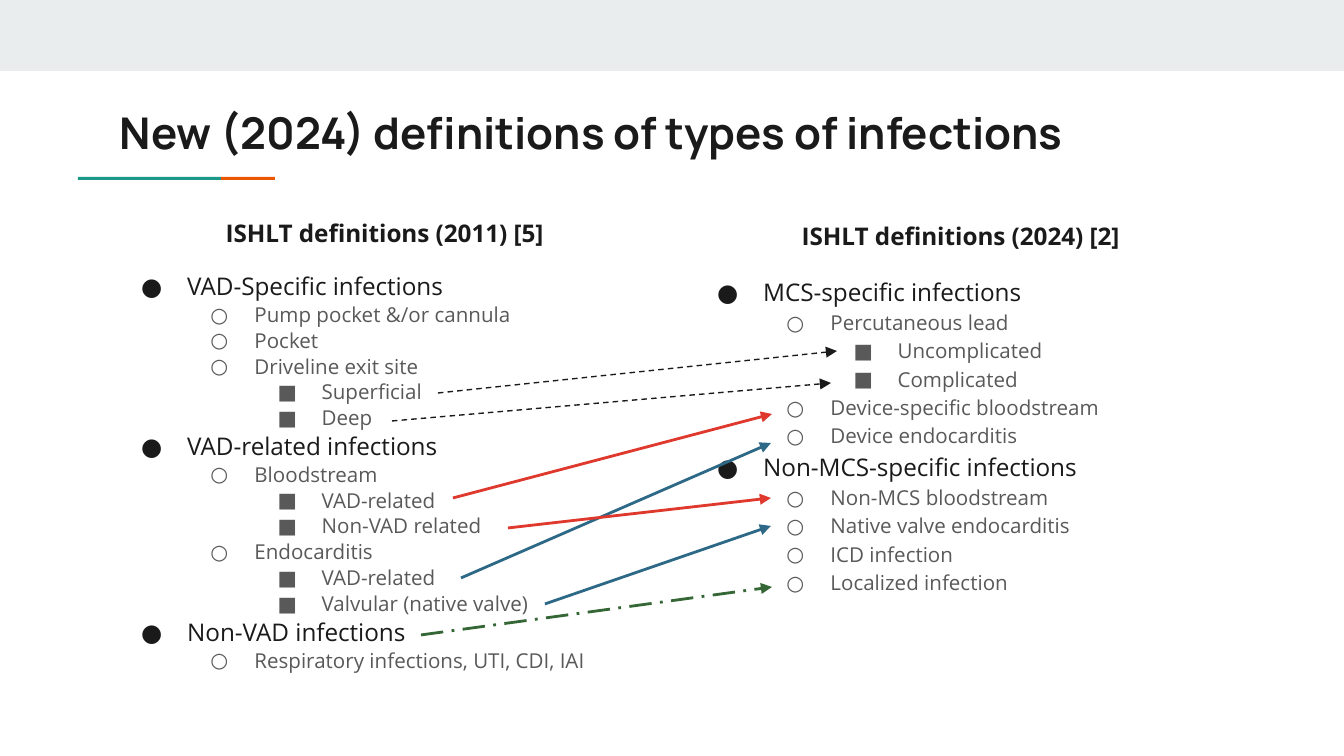
"""Build a slide mapping the 2011 infection definitions to the 2024 ones."""
import lxml.etree
import pptx
import pptx.dml.color
import pptx.enum.dml
import pptx.enum.shapes
import pptx.enum.text
import pptx.oxml.ns
import pptx.util

PX = 914400 / 134.4
INK, GREY, RED, BLUE, GREEN = "1A1A1A", "595959", "DF382C", "2D6987", "356635"


def paint(color_format, color):
    color_format.rgb = pptx.dml.color.RGBColor.from_string(color)


def add_xml(parent, tag, **attributes):
    return lxml.etree.SubElement(parent, pptx.oxml.ns.qn(tag), attributes)


presentation = pptx.Presentation()
presentation.slide_width = round(1344 * PX)
presentation.slide_height = round(756 * PX)
slide = presentation.slides.add_slide(presentation.slide_layouts[6])

bars = [
    (0, 0, 1344, 71, "E9EDEE"),
    (78, 177, 143, 3, "1A9988"),
    (221, 177, 54, 3, "EB5600"),
]
for *bounds, color in bars:
    shape = slide.shapes.add_shape(
        pptx.enum.shapes.MSO_SHAPE.RECTANGLE, *[round(value * PX) for value in bounds])
    shape.shadow.inherit = False
    shape.fill.solid()
    paint(shape.fill.fore_color, color)
    shape.line.fill.background()

title = [("New (2024) definitions of types of infections", None)]
definitions_2011 = [
    ("ISHLT definitions (2011) [5]", None),
    ("VAD-Specific infections", 0),
    ("Pump pocket &/or cannula", 1),
    ("Pocket", 1),
    ("Driveline exit site", 1),
    ("Superficial", 2),
    ("Deep", 2),
    ("VAD-related infections", 0),
    ("Bloodstream", 1),
    ("VAD-related", 2),
    ("Non-VAD related", 2),
    ("Endocarditis", 1),
    ("VAD-related", 2),
    ("Valvular (native valve)", 2),
    ("Non-VAD infections", 0),
    ("Respiratory infections, UTI, CDI, IAI", 1),
]
definitions_2024 = [
    ("ISHLT definitions (2024) [2]", None),
    ("MCS-specific infections", 0),
    ("Percutaneous lead", 1),
    ("Uncomplicated", 2),
    ("Complicated", 2),
    ("Device-specific bloodstream", 1),
    ("Device endocarditis", 1),
    ("Non-MCS-specific infections", 0),
    ("Non-MCS bloodstream", 1),
    ("Native valve endocarditis", 1),
    ("ICD infection", 1),
    ("Localized infection", 1),
]
LEFT = pptx.enum.text.PP_ALIGN.LEFT
CENTER = pptx.enum.text.PP_ALIGN.CENTER
text_boxes = [
    ((107, 93, 1130, 79), title, "Manrope", 23.4, 1, LEFT),
    ((107, 204, 555, 499), definitions_2011, "Open Sans", 13, 1.05, CENTER),
    ((683, 204, 555, 439), definitions_2024, "Open Sans", 13, 1.15, CENTER),
]
for bounds, entries, font_name, heading_size, spacing, heading_alignment in text_boxes:
    text_box = slide.shapes.add_textbox(*[round(value * PX) for value in bounds])
    text_frame = text_box.text_frame
    text_frame.word_wrap = True
    text_frame.margin_left = text_frame.margin_right = round(13 * PX)
    text_frame.margin_top = text_frame.margin_bottom = round(13 * PX)
    text_frame.text = "\n".join(text for text, level in entries)
    for index, (paragraph, (text, level)) in enumerate(zip(text_frame.paragraphs, entries)):
        paragraph.line_spacing = spacing
        color = GREY if level else INK
        if level is None:
            paragraph.alignment = heading_alignment
        else:
            paragraph.level = level
            if index == 1:
                paragraph.space_before = pptx.util.Pt(12)
            properties = paragraph._p.get_or_add_pPr()
            properties.set("marL", str(round(67.2 * (level + 1) * PX)))
            properties.set("indent", str(round((-44 if level else -46) * PX)))
            add_xml(add_xml(properties, "a:buClr"), "a:srgbClr", val=color)
            add_xml(properties, "a:buFont", typeface=font_name)
            add_xml(properties, "a:buChar", char="●○■"[level])
        font = paragraph.runs[0].font
        font.name = font_name
        font.size = pptx.util.Pt(11 if level else heading_size)
        font.bold = level is None
        paint(font.color, color)

DASH = pptx.enum.dml.MSO_LINE.DASH
LONG_DASH_DOT = pptx.enum.dml.MSO_LINE.LONG_DASH_DOT
arrows = [
    (453, 498, 772, 414, RED, 1.5, None),
    (461, 578, 771, 443, BLUE, 1.5, None),
    (508, 528, 771, 498, RED, 1.5, None),
    (545, 604, 771, 526, BLUE, 1.5, None),
    (421, 635, 772, 587, GREEN, 1.5, LONG_DASH_DOT),
    (438, 393, 837, 351, INK, 0.75, DASH),
    (392, 421, 831, 383, INK, 0.75, DASH),
]
for *ends, color, width, dash in arrows:
    connector = slide.shapes.add_connector(
        pptx.enum.shapes.MSO_CONNECTOR.STRAIGHT, *[round(value * PX) for value in ends])
    connector.line.width = pptx.util.Pt(width)
    paint(connector.line.color, color)
    if dash:
        connector.line.dash_style = dash
    add_xml(connector.line._get_or_add_ln(), "a:tailEnd", type="triangle")
    add_xml(connector._element.spPr, "a:effectLst")

presentation.save("out.pptx")
